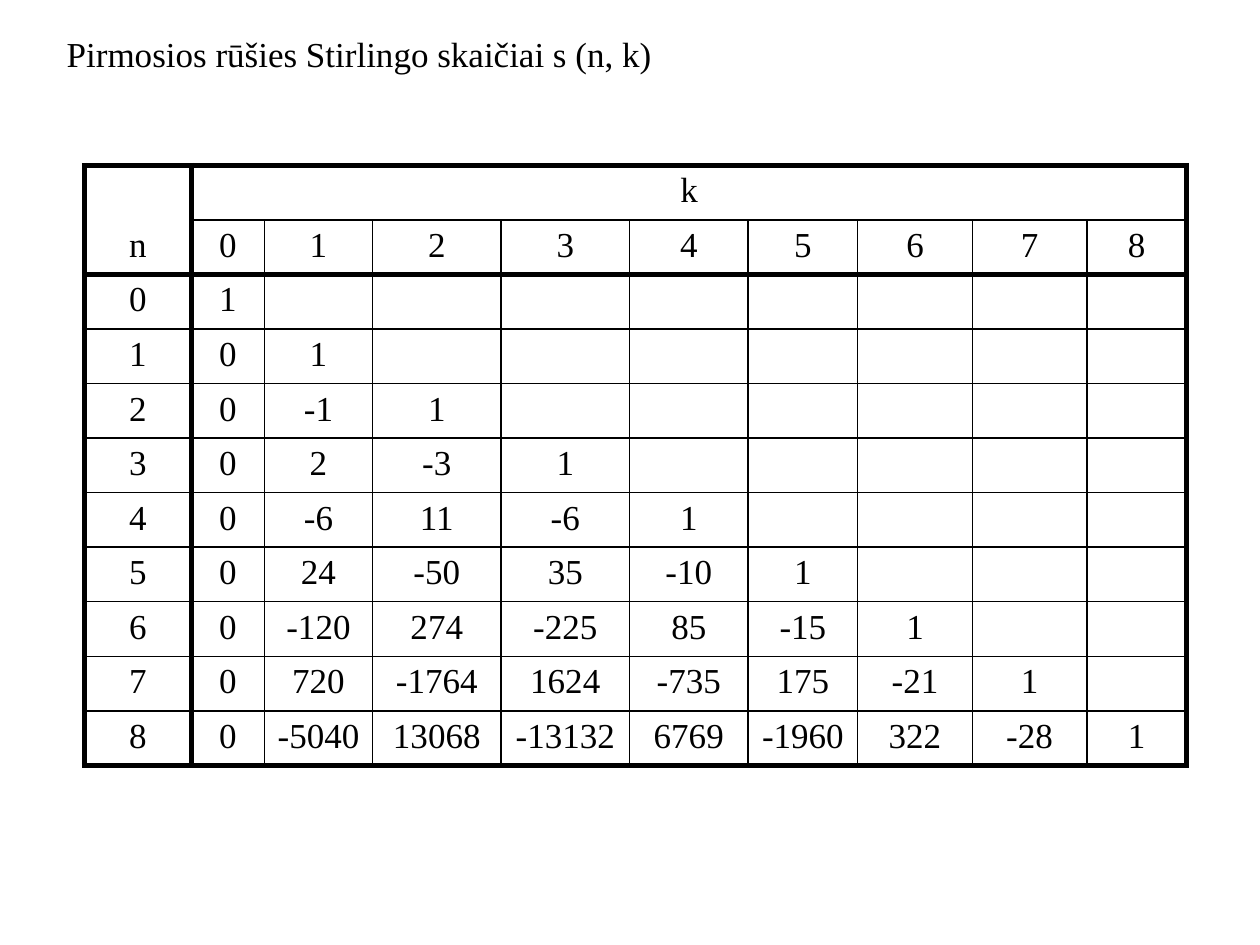
import pptx
import pptx.dml.color
import pptx.enum.text
import pptx.util
from lxml import etree
from pptx.oxml.ns import qn

Cm = pptx.util.Cm
Pt = pptx.util.Pt

TITLE = "Pirmosios rūšies Stirlingo skaičiai s (n, k)"
STIRLING_ROWS = [
    [1],
    [0, 1],
    [0, -1, 1],
    [0, 2, -3, 1],
    [0, -6, 11, -6, 1],
    [0, 24, -50, 35, -10, 1],
    [0, -120, 274, -225, 85, -15, 1],
    [0, 720, -1764, 1624, -735, 175, -21, 1],
    [0, -5040, 13068, -13132, 6769, -1960, 322, -28, 1],
]
TABLE_ROWS = [["", "k"], ["n", *range(len(STIRLING_ROWS))]] + [
    [n, *values] for n, values in enumerate(STIRLING_ROWS)
]
COLUMN_WIDTHS = [2.16, 1.47, 2.18, 2.59, 2.59, 2.39, 2.21, 2.31, 2.31, 2.01]
ROW_HEIGHT = 1.1
ROW_COUNT, COLUMN_COUNT = len(TABLE_ROWS), len(COLUMN_WIDTHS)
THICK_ROW_EDGES = (0, 2, ROW_COUNT)
THICK_COLUMN_EDGES = (0, 1, COLUMN_COUNT)
THIN, THICK = 1, 3
FONT = "Times New Roman"
FONT_SIZE = Pt(20)
BLACK = pptx.dml.color.RGBColor(0, 0, 0)
NO_STYLE = "{2D5ABB26-0587-4C30-8999-92F81FD0307C}"


def write(text_frame, text, alignment):
    text_frame.text = text
    paragraph = text_frame.paragraphs[0]
    paragraph.alignment = alignment
    for font in [paragraph.font] + [run.font for run in paragraph.runs]:
        font.name = FONT
        font.size = FONT_SIZE
        font.color.rgb = BLACK


def add_border(cell, side, weight):
    properties = cell._tc.get_or_add_tcPr()
    line = etree.SubElement(properties, qn(f"a:ln{side}"), w=str(Pt(weight)))
    if weight:
        fill = etree.SubElement(line, qn("a:solidFill"))
        etree.SubElement(fill, qn("a:srgbClr"), val=str(BLACK))
    else:
        etree.SubElement(line, qn("a:noFill"))


def row_edge_weight(edge, column):
    if edge == 1 and column == 0:
        return 0
    return THICK if edge in THICK_ROW_EDGES else THIN


def column_edge_weight(edge):
    return THICK if edge in THICK_COLUMN_EDGES else THIN


def add_title(slide):
    title = slide.shapes.title
    title.left, title.top = Cm(1.09), Cm(0.53)
    title.width, title.height = Cm(23.39), Cm(1.1)
    write(title.text_frame, TITLE, pptx.enum.text.PP_ALIGN.LEFT)
    title.text_frame.vertical_anchor = pptx.enum.text.MSO_ANCHOR.TOP
    title.text_frame.word_wrap = True


def add_stirling_table(slide):
    frame = slide.shapes.add_table(
        ROW_COUNT, COLUMN_COUNT, Cm(1.7), Cm(3.33),
        Cm(sum(COLUMN_WIDTHS)), Cm(ROW_HEIGHT * ROW_COUNT),
    )
    table = frame.table
    table.first_row = table.horz_banding = False
    table._tbl.tblPr.find(qn("a:tableStyleId")).text = NO_STYLE
    for column, width in zip(table.columns, COLUMN_WIDTHS):
        column.width = Cm(width)
    for row in table.rows:
        row.height = Cm(ROW_HEIGHT)
    table.cell(0, 1).merge(table.cell(0, COLUMN_COUNT - 1))

    for row, values in enumerate(TABLE_ROWS):
        for column in range(COLUMN_COUNT):
            cell = table.cell(row, column)
            if cell.is_spanned:
                continue
            text = str(values[column]) if column < len(values) else ""
            write(cell.text_frame, text, pptx.enum.text.PP_ALIGN.CENTER)
            add_border(cell, "L", column_edge_weight(column))
            add_border(cell, "R", column_edge_weight(column + cell.span_width))
            add_border(cell, "T", row_edge_weight(row, column))
            add_border(cell, "B", row_edge_weight(row + 1, column))
            cell.fill.background()


def main():
    presentation = pptx.Presentation()
    presentation.slide_width, presentation.slide_height = Cm(25.4), Cm(19.05)
    slide = presentation.slides.add_slide(presentation.slide_layouts[5])
    add_title(slide)
    add_stirling_table(slide)
    presentation.save("out.pptx")


if __name__ == "__main__":
    main()
